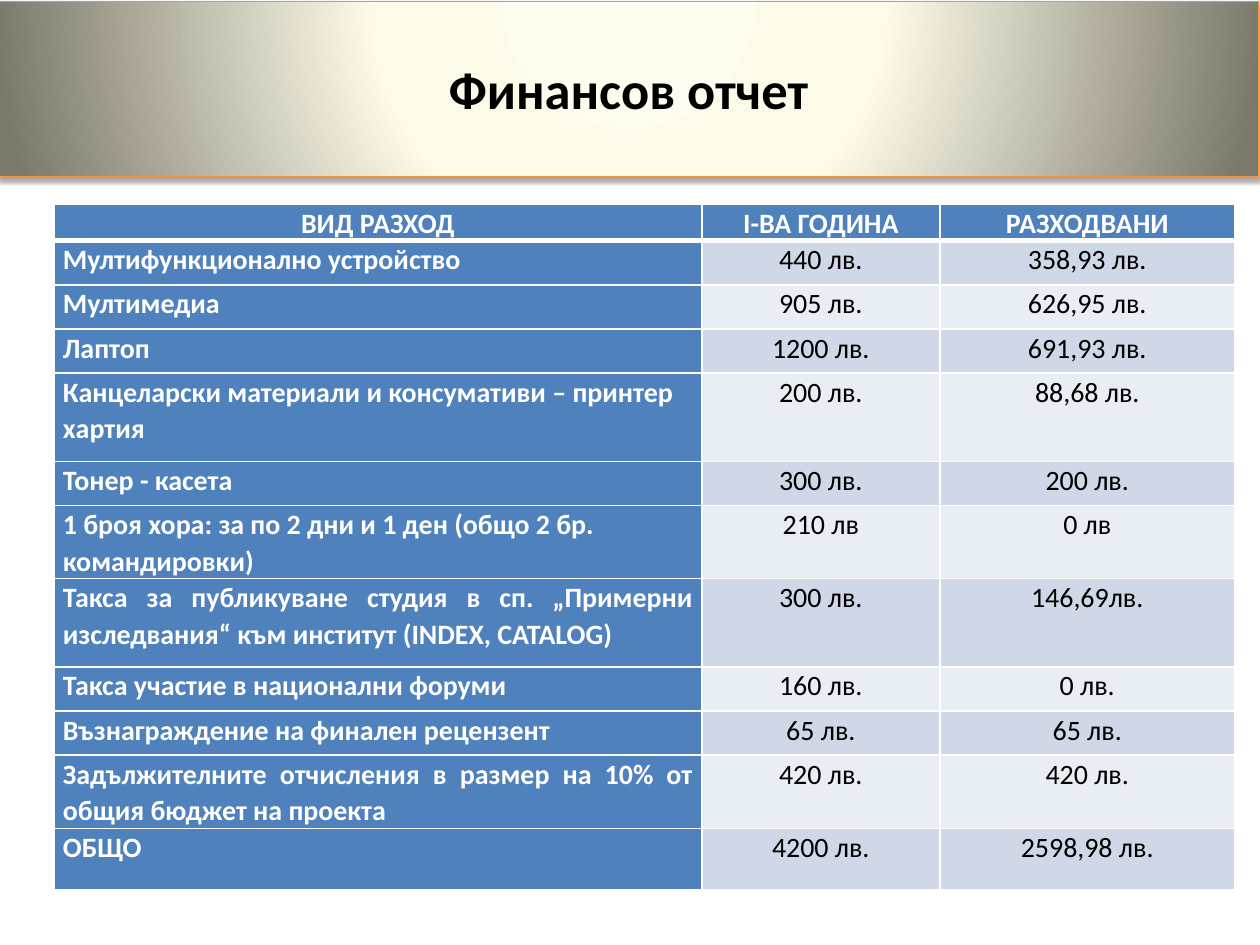
from dataclasses import dataclass
from lxml.etree import SubElement as Sub
from pptx import Presentation
from pptx.dml.color import RGBColor as Rgb
from pptx.enum.text import MSO_ANCHOR as Anchor, PP_ALIGN as Align
from pptx.oxml import parse_xml
from pptx.oxml.ns import nsdecls, qn
from pptx.util import Inches, Pt


@dataclass(frozen=True)
class Theme:
    font: str = "Calibri"
    head: int = 30
    body: int = 16
    lead: float = 1.07
    blue: str = "4F81BD"
    bands: tuple = ("E9EDF4", "D0D8E8")
    white: str = "FFFFFF"
    black: str = "000000"
    edge: str = "F69240"
    glow: tuple = ((0, "FEFCEE"), (40, "FDFAEA"), (100, "7B796B"))


THEME = Theme()
WIDE, HIGH = Inches(10), Inches(7.5)
COLS = (5.14, 1.89, 2.34)
UNIT = 0.35
HEADS = ("ВИД РАЗХОД", "I-ВА ГОДИНА", "РАЗХОДВАНИ")
LEFT, JUST = Align.LEFT, Align.JUSTIFY
COSTS = (
    ("Мултифункционално устройство", "440 лв.", "358,93 лв.", JUST, 1),
    ("Мултимедиа", "905 лв.", "626,95 лв.", JUST, 1),
    ("Лаптоп", "1200 лв.", "691,93 лв.", LEFT, 1),
    ("Канцеларски материали и консумативи – принтер хартия", "200 лв.", "88,68 лв.", LEFT, 2),
    ("Тонер - касета", "300 лв.", "200 лв.", LEFT, 1),
    ("1 броя хора: за по 2 дни и 1 ден (общо 2 бр. командировки)", "210 лв", "0 лв", LEFT, 1),
    ("Такса за публикуване студия в сп. „Примерни изследвания“ към институт (INDEX, CATALOG)",
     "300 лв.", "146,69лв.", JUST, 2),
    ("Такса участие в национални форуми", "160 лв.", "0 лв.", JUST, 1),
    ("Възнаграждениe на финален рецензент", "65 лв.", "65 лв.", LEFT, 1),
    ("Задължителните отчисления в размер на 10% от общия бюджет на проекта",
     "420 лв.", "420 лв.", JUST, 1),
    ("ОБЩО", "4200 лв.", "2598,98 лв.", LEFT, 1.4),
)


def style(para, size, color, bold, align):
    para.alignment = align
    for run in para.runs:
        font = run.font
        font.name, font.size, font.bold = THEME.font, Pt(size), bold
        font.color.rgb = Rgb.from_string(color)


def glow(shape):
    stops = "".join(
        f'<a:gs pos="{pos * 1000}"><a:srgbClr val="{color}"/></a:gs>'
        for pos, color in THEME.glow)
    shape.fill.solid()
    props = shape.fill._xPr
    props.replace(props.find(qn("a:solidFill")), parse_xml(
        f'<a:gradFill {nsdecls("a")} rotWithShape="1"><a:gsLst>{stops}</a:gsLst>'
        '<a:path path="circle"><a:fillToRect l="50000" t="-80000" r="50000" b="180000"/>'
        '</a:path></a:gradFill>'))
    shape.line.color.rgb = Rgb.from_string(THEME.edge)
    shape.line.width = Pt(0.75)
    props.append(parse_xml(
        f'<a:effectLst {nsdecls("a")}><a:outerShdw blurRad="{Pt(3.1)}" dist="{Pt(1.8)}" '
        f'dir="5400000" rotWithShape="0"><a:srgbClr val="{THEME.black}">'
        '<a:alpha val="35000"/></a:srgbClr></a:outerShdw></a:effectLst>'))


def add_title(slide, text):
    title = slide.shapes.title
    title.left, title.top = int(WIDE * -0.001), Inches(0.01)
    title.width, title.height = WIDE, Inches(1.39)
    glow(title)
    frame = title.text_frame
    frame.text = text
    frame.vertical_anchor = Anchor.MIDDLE
    style(frame.paragraphs[0], THEME.head, THEME.black, True, Align.CENTER)


def add_edges(cell, top, base):
    props = cell._tc.get_or_add_tcPr()
    widths = {"L": 1, "R": 1, "T": top, "B": base}
    for spot, (side, width) in enumerate(widths.items()):
        line = parse_xml(f'<a:ln{side} {nsdecls("a")} w="{Pt(width)}"/>')
        fill = Sub(line, qn("a:solidFill"))
        Sub(fill, qn("a:srgbClr"), val=THEME.white)
        props.insert(spot, line)


def fill_cell(cell, text, row, col, align):
    dark = row == 0 or col == 0
    cell.margin_left = cell.margin_right = Inches(0.07)
    cell.margin_top = cell.margin_bottom = 0
    cell.fill.solid()
    cell.fill.fore_color.rgb = Rgb.from_string(THEME.blue if dark else THEME.bands[row % 2])
    cell.text_frame.text = text
    para = cell.text_frame.paragraphs[0]
    para.line_spacing = THEME.lead
    style(para, THEME.body, THEME.white if dark else THEME.black, dark, align)
    add_edges(cell, 3 if row == 1 else 1, 3 if row == 0 else 1)


def add_costs(slide):
    rows = [(*HEADS, Align.CENTER, 0.83), *COSTS]
    frame = slide.shapes.add_table(
        len(rows), len(COLS), int(WIDE * 0.043), int(HIGH * 0.216),
        Inches(sum(COLS)), Inches(5.44))
    table = frame.table
    for col, width in zip(table.columns, COLS):
        col.width = Inches(width)
    for row, (*texts, align, units) in enumerate(rows):
        table.rows[row].height = Inches(UNIT * units)
        for col, text in enumerate(texts):
            fill_cell(table.cell(row, col), text, row, col,
                      Align.CENTER if col else align)


def main():
    deck = Presentation()
    deck.slide_width, deck.slide_height = WIDE, HIGH
    slide = deck.slides.add_slide(deck.slide_layouts[5])
    add_title(slide, "Финансов отчет")
    add_costs(slide)
    deck.save("out.pptx")


if __name__ == "__main__":
    main()
